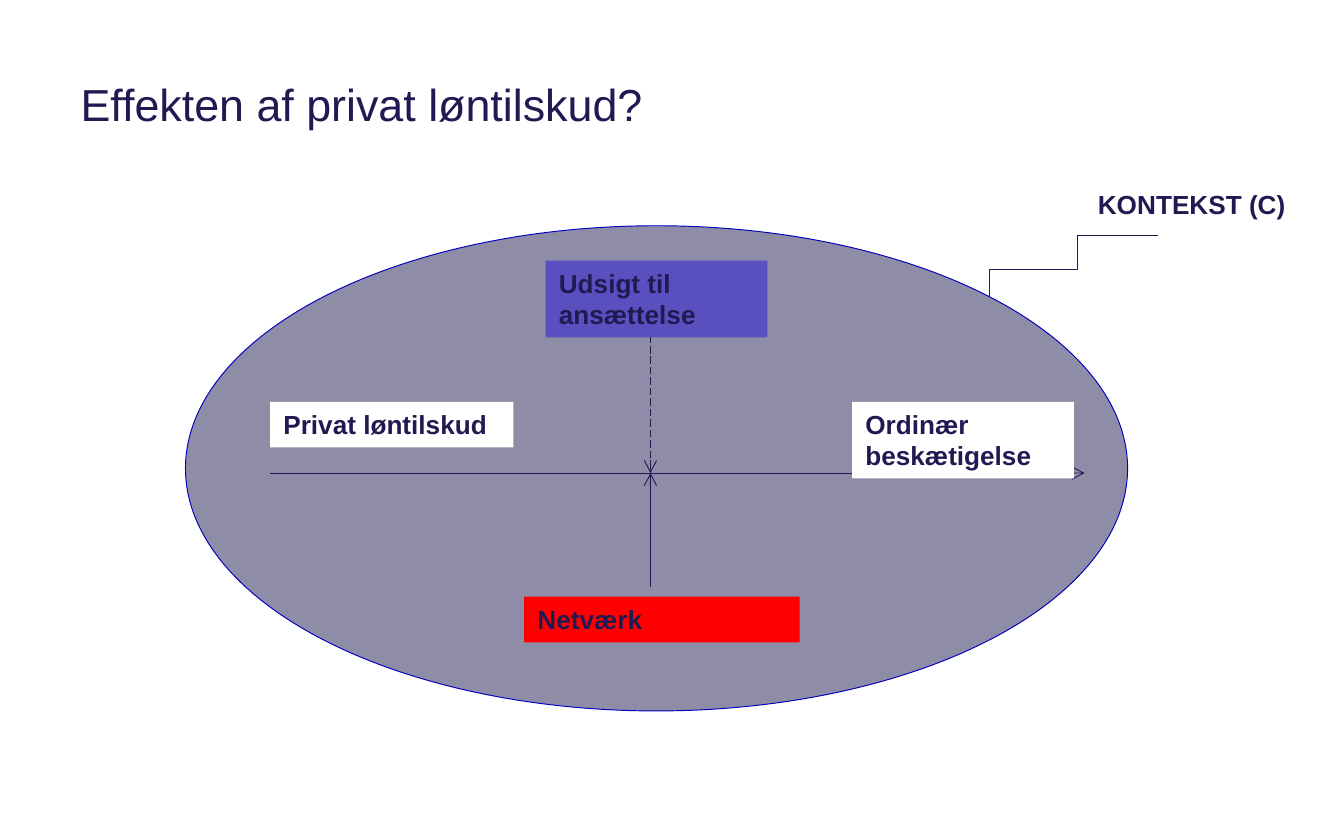
from lxml.etree import SubElement
from pptx import Presentation
from pptx.dml.color import RGBColor
from pptx.enum.dml import MSO_LINE
from pptx.enum.shapes import MSO_CONNECTOR, MSO_SHAPE
from pptx.enum.text import MSO_ANCHOR, MSO_AUTO_SIZE, PP_ALIGN
from pptx.oxml.ns import qn
from pptx.util import Inches, Pt

COLORS = {
    "ink": "211A52",
    "outline": "0000BF",
    "white": "FFFFFF",
    "prospect": "594FBF",
    "network": "FF0000",
}
FONT = "Arial"


def rgb(name):
    return RGBColor.from_string(COLORS[name])


def style_text(frame, size, bold=False):
    for paragraph in frame.paragraphs:
        paragraph.alignment = PP_ALIGN.LEFT
        for run in paragraph.runs:
            run.font.name = FONT
            run.font.size = Pt(size)
            run.font.bold = bold
            run.font.color.rgb = rgb("ink")


def add_label(slide, text, left, top, width, height, fill="white"):
    label = slide.shapes.add_shape(MSO_SHAPE.RECTANGLE, Inches(left), Inches(top),
                                   Inches(width), Inches(height))
    label.shadow.inherit = False
    label.fill.solid()
    label.fill.fore_color.rgb = rgb(fill)
    label.line.fill.background()
    frame = label.text_frame
    frame.text = text
    frame.word_wrap = True
    frame.auto_size = MSO_AUTO_SIZE.SHAPE_TO_FIT_TEXT
    frame.vertical_anchor = MSO_ANCHOR.TOP
    style_text(frame, 14, bold=True)


def add_line(slide, start, end, kind=MSO_CONNECTOR.STRAIGHT):
    line = slide.shapes.add_connector(kind, *(Inches(v) for v in (*start, *end)))
    line.line.color.rgb = rgb("ink")
    line.line.width = Pt(0.5)
    SubElement(line._element.spPr, qn("a:effectLst"))
    return line


def add_arrow(slide, start, end, dashed=False):
    arrow = add_line(slide, start, end)
    if dashed:
        arrow.line.dash_style = MSO_LINE.LONG_DASH
    SubElement(arrow.line._get_or_add_ln(), qn("a:tailEnd"), type="arrow")


def add_title(slide, left, top, width, height):
    title = slide.shapes.title
    title.left, title.top = Inches(left), Inches(top)
    title.width, title.height = Inches(width), Inches(height)
    title.text_frame.text = "Effekten af privat løntilskud?"
    title.text_frame.vertical_anchor = MSO_ANCHOR.MIDDLE
    style_text(title.text_frame, 24)


def add_effect_model(slide, left, top, width, height):
    # Context ellipse, half transparent
    context = slide.shapes.add_shape(MSO_SHAPE.OVAL, Inches(left), Inches(top),
                                     Inches(width), Inches(height))
    context.shadow.inherit = False
    context.fill.solid()
    context.fill.fore_color.rgb = rgb("ink")
    color = context._element.spPr.find(qn("a:solidFill"))[0]
    SubElement(color, qn("a:alpha"), val="50000")
    context.line.color.rgb = rgb("outline")
    context.line.width = Pt(0.5)

    # Main effect, from subsidy to employment
    axis_x, axis_y = left + 3.46, top + 1.84
    label_y = top + 1.31
    subsidy_x = left + 0.63
    add_arrow(slide, (subsidy_x, axis_y), (left + 6.69, axis_y))
    add_label(slide, "Privat løntilskud", subsidy_x, label_y, 1.81, 0.34)
    add_label(slide, "Ordinær\nbeskætigelse", left + 4.96, label_y, 1.65, 0.57)

    # Mechanisms meeting the main effect
    add_arrow(slide, (axis_x, top + 2.69), (axis_x, axis_y))
    add_label(slide, "Netværk", left + 2.52, top + 2.76, 2.05, 0.34, "network")
    add_arrow(slide, (axis_x, top + 0.66), (axis_x, axis_y), dashed=True)
    add_label(slide, "Udsigt til ansættelse", left + 2.68, top + 0.26, 1.65, 0.57,
              "prospect")


def add_context_callout(slide, left, top, width, height):
    # Four-part elbow, turned a quarter so that it leaves the ellipse upwards
    elbow = add_line(slide, (left + 0.86, top + 1.26), (left + 0.4, top),
                     MSO_CONNECTOR.ELBOW)
    elbow.rotation = 90 if hasattr(elbow, "rotation") else None
    properties = elbow._element.spPr
    properties.find(qn("a:xfrm")).set("rot", "5400000")
    geometry = properties.find(qn("a:prstGeom"))
    geometry.set("prst", "bentConnector4")
    guides = geometry.find(qn("a:avLst"))
    for name, value in (("adj1", 45000), ("adj2", 52100)):
        SubElement(guides, qn("a:gd"), name=name, fmla=f"val {value}")
    add_label(slide, "KONTEKST (C)", left + width - 1.65, top, 1.65, 0.34)


def main():
    deck = Presentation()
    deck.slide_width, deck.slide_height = Inches(10), Inches(6.25)
    slide = deck.slides.add_slide(deck.slide_layouts[5])
    slide.background.fill.solid()
    slide.background.fill.fore_color.rgb = rgb("white")
    add_title(slide, 0.5, 0.25, 9, 1.04)
    add_effect_model(slide, 1.38, 1.68, 7.01, 3.61)
    add_context_callout(slide, 7.36, 1.35, 2.36, 0.86)
    deck.save("out.pptx")


if __name__ == "__main__":
    main()
